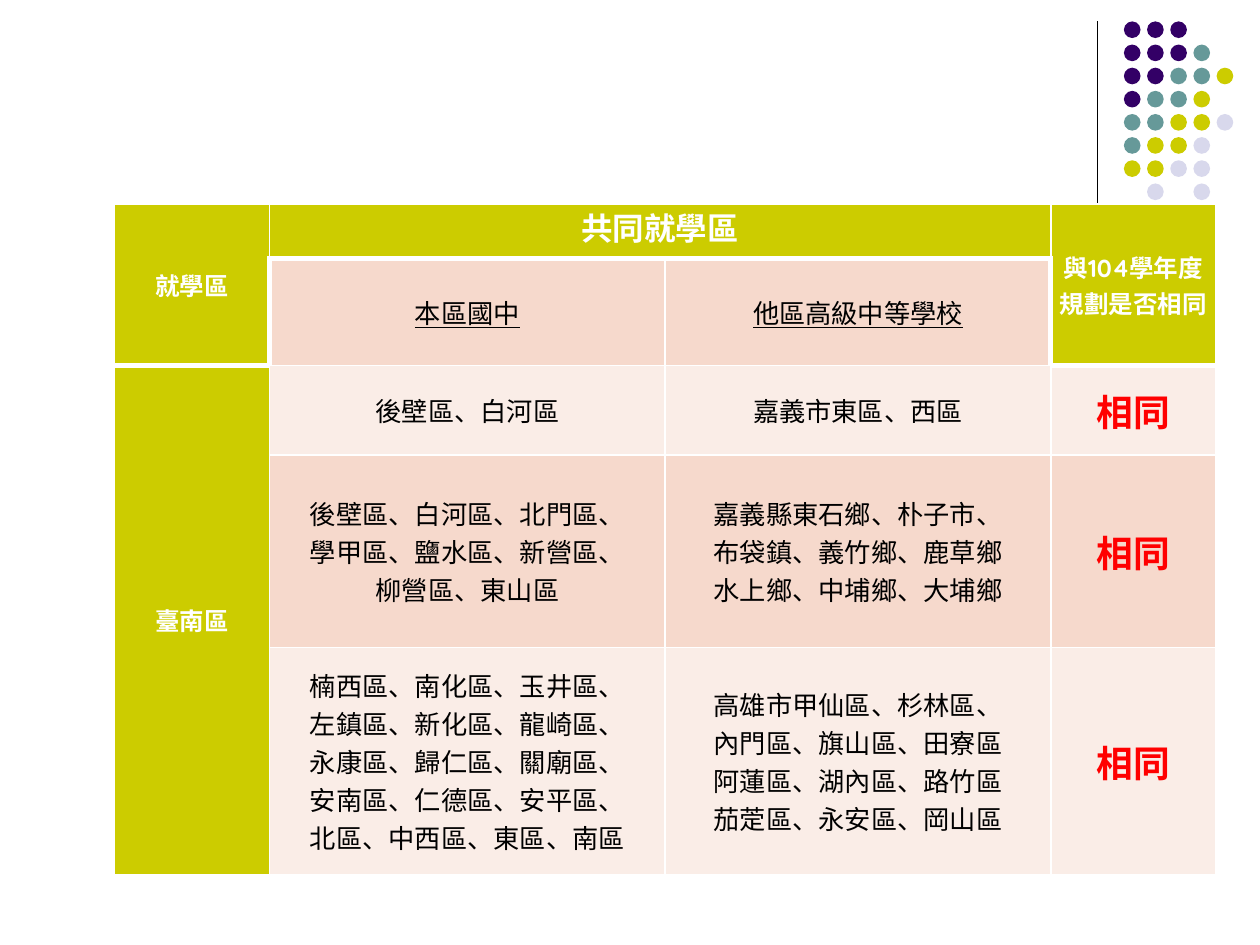
from lxml import etree
from pptx import Presentation
from pptx import util as u
from pptx.dml.color import RGBColor
from pptx.enum import shapes, text
from pptx.oxml import ns

FONT = "Quicksand"
BLACK = RGBColor(0x00, 0x00, 0x00)
WHITE = RGBColor(0xFF, 0xFF, 0xFF)
RED = RGBColor(0xFF, 0x00, 0x00)
OLIVE = RGBColor(0xCC, 0xCC, 0x00)
PURPLE = RGBColor(0x33, 0x00, 0x66)
TEAL = RGBColor(0x66, 0x99, 0x99)
LAVENDER = RGBColor(0xD8, 0xD8, 0xEC)
SALMON = RGBColor(0xF6, 0xD9, 0xCC)
BLUSH = RGBColor(0xFA, 0xED, 0xE7)

DOT_COLOURS = {"P": PURPLE, "T": TEAL, "O": OLIVE, "L": LAVENDER}
DOT_ROWS = ["PPP", "PPPT", "PPTTO", "PTTO", "TTOOL", "TOOL", "OOLL", "-L-L"]
DOT_SHARE = 0.72

COLUMN_WIDTHS = [1.23, 3.14, 3.06, 1.31]
ROW_HEIGHTS = [0.43, 0.85, 0.71, 1.53, 1.8]
MERGES = [((0, 0), (1, 0)), ((0, 1), (0, 2)), ((0, 3), (1, 3)), ((2, 0), (4, 0))]
HEAVY_EDGES = {
    (0, 1, "B"), (0, 2, "B"), (1, 1, "T"), (1, 2, "T"),
    (1, 0, "B"), (1, 3, "B"), (2, 0, "T"), (2, 3, "T"),
    (1, 0, "R"), (1, 1, "L"), (1, 2, "R"), (1, 3, "L"),
}

HEADING = {"size": 14, "colour": WHITE, "bold": True}
TITLE = {**HEADING, "size": 18}
BODY = {"size": 15, "colour": BLACK, "bold": False}
SUBHEADING = {**BODY, "underline": True}
VERDICT = {"size": 21, "colour": RED, "bold": True}

DISTRICTS = [
    (["後壁區、白河區"], ["嘉義市東區、西區"]),
    (["後壁區、白河區、北門區、", "學甲區、鹽水區、新營區、", "柳營區、東山區"],
     ["嘉義縣東石鄉、朴子市、", "布袋鎮、義竹鄉、鹿草鄉", "水上鄉、中埔鄉、大埔鄉"]),
    (["楠西區、南化區、玉井區、", "左鎮區、新化區、龍崎區、", "永康區、歸仁區、關廟區、",
      "安南區、仁德區、安平區、", "北區、中西區、東區、南區"],
     ["高雄市甲仙區、杉林區、", "內門區、旗山區、田寮區", "阿蓮區、湖內區、路竹區",
      "茄萣區、永安區、岡山區"]),
]


def add_rule(page, box):
    left, top, width, height = box
    rule = page.shapes.add_connector(
        shapes.MSO_CONNECTOR.STRAIGHT, u.Inches(left), u.Inches(top),
        u.Inches(left + width), u.Inches(top + height))
    rule.line.color.rgb = BLACK
    rule.line.width = u.Pt(0.75)
    etree.SubElement(rule._element.spPr, ns.qn("a:effectLst"))


def add_dots(page, box):
    left, top, width, height = box
    pitch_x = width / max(len(row) for row in DOT_ROWS)
    pitch_y = height / len(DOT_ROWS)
    size = u.Inches(pitch_x * DOT_SHARE)
    group = page.shapes.add_group_shape()
    for row, codes in enumerate(DOT_ROWS):
        for column, code in enumerate(codes):
            if code not in DOT_COLOURS:
                continue
            dot = group.shapes.add_shape(
                shapes.MSO_SHAPE.OVAL, u.Inches(left + column * pitch_x),
                u.Inches(top + row * pitch_y), size, size)
            dot.shadow.inherit = False
            dot.fill.solid()
            dot.fill.fore_color.rgb = DOT_COLOURS[code]
            dot.line.fill.background()


def draw_borders(cell, row, column):
    properties = cell._tc.get_or_add_tcPr()
    for side in "LRTB":
        points = 3 if (row, column, side) in HEAVY_EDGES else 1
        edge = etree.SubElement(properties, ns.qn(f"a:ln{side}"), w=str(u.Pt(points)))
        fill = etree.SubElement(edge, ns.qn("a:solidFill"))
        etree.SubElement(fill, ns.qn("a:srgbClr"), val=str(WHITE))


def cell_fill(row, column):
    if row == 0 or column == 0 or (row, column) == (1, 3):
        return OLIVE
    return SALMON if row % 2 else BLUSH


def write_cell(cell, lines, style, anchor=text.MSO_ANCHOR.MIDDLE):
    cell.vertical_anchor = anchor
    frame = cell.text_frame
    for index, line in enumerate(lines):
        para = frame.add_paragraph() if index else frame.paragraphs[0]
        para.alignment = text.PP_ALIGN.CENTER
        span = para.add_run()
        span.text = line
        span.font.name = FONT
        span.font.size = u.Pt(style["size"])
        span.font.bold = style["bold"]
        span.font.underline = style.get("underline", False)
        span.font.color.rgb = style["colour"]


def add_district_table(page, box):
    table = page.shapes.add_table(
        len(ROW_HEIGHTS), len(COLUMN_WIDTHS), *map(u.Inches, box)).table
    table.first_row = table.horz_banding = False
    left, top, width, height = box
    for column, share in zip(table.columns, COLUMN_WIDTHS):
        column.width = u.Inches(width * share / sum(COLUMN_WIDTHS))
    for row, share in zip(table.rows, ROW_HEIGHTS):
        row.height = u.Inches(height * share / sum(ROW_HEIGHTS))
    for row in range(len(ROW_HEIGHTS)):
        for column in range(len(COLUMN_WIDTHS)):
            cell = table.cell(row, column)
            draw_borders(cell, row, column)
            cell.fill.solid()
            cell.fill.fore_color.rgb = cell_fill(row, column)
            cell.margin_left = cell.margin_right = u.Inches(0.06)
            cell.margin_top = cell.margin_bottom = 0
    for first, last in MERGES:
        table.cell(*first).merge(table.cell(*last))

    write_cell(table.cell(0, 0), ["就學區"], HEADING)
    write_cell(table.cell(0, 1), ["共同就學區"], TITLE, text.MSO_ANCHOR.TOP)
    write_cell(table.cell(0, 3), ["與104學年度規劃是否相同"], HEADING)
    write_cell(table.cell(1, 1), ["本區國中"], SUBHEADING)
    write_cell(table.cell(1, 2), ["他區高級中等學校"], SUBHEADING)
    write_cell(table.cell(2, 0), ["臺南區"], HEADING)
    for row, (local, outside) in enumerate(DISTRICTS, start=2):
        write_cell(table.cell(row, 1), local, BODY)
        write_cell(table.cell(row, 2), outside, BODY)
        write_cell(table.cell(row, 3), ["相同"], VERDICT)


def main():
    deck = Presentation()
    deck.slide_width = u.Inches(10)
    deck.slide_height = u.Inches(7.5)
    page = deck.slides.add_slide(deck.slide_layouts[6])
    add_rule(page, (8.71, 0.17, 0, 1.66))
    add_dots(page, (8.92, 0.17, 0.92, 1.47))
    add_district_table(page, (0.91, 1.62, 8.74, 5.32))
    deck.save("out.pptx")


if __name__ == "__main__":
    main()
